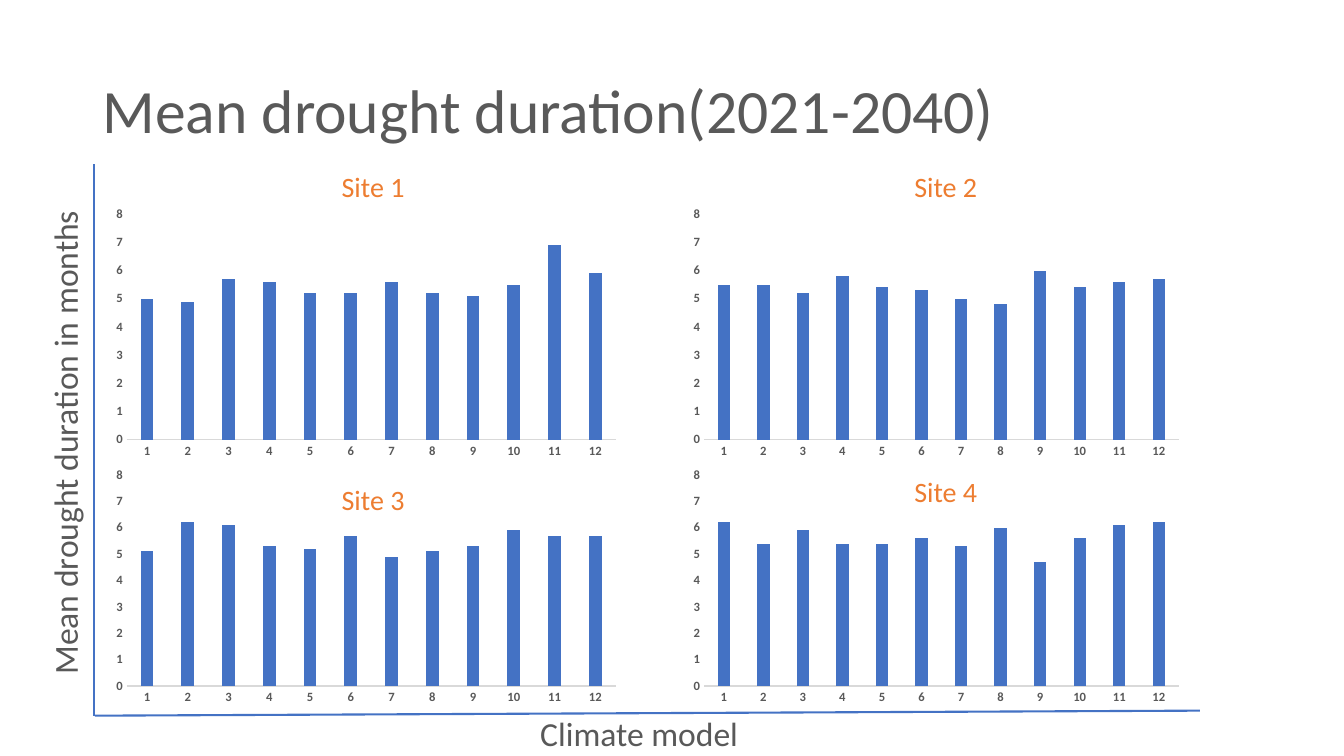
"""Build a slide comparing mean drought duration at four sites across climate models."""
from dataclasses import dataclass
from lxml.etree import SubElement
from pptx import Presentation
from pptx.chart.data import CategoryChartData
from pptx.dml.color import RGBColor
from pptx.enum.chart import XL_CHART_TYPE, XL_TICK_MARK
from pptx.enum.shapes import MSO_CONNECTOR
from pptx.enum.text import MSO_ANCHOR, MSO_AUTO_SIZE
from pptx.oxml.ns import qn
from pptx.util import Pt


@dataclass(frozen=True)
class Theme:
    font: str = "Calibri"
    grey: RGBColor = RGBColor(0x59, 0x59, 0x59)
    pale: RGBColor = RGBColor(0xD9, 0xD9, 0xD9)
    blue: RGBColor = RGBColor(0x44, 0x72, 0xC4)
    orange: RGBColor = RGBColor(0xED, 0x7D, 0x31)
    black: RGBColor = RGBColor(0, 0, 0)
    title_size: int = 44
    label_size: int = 24
    site_size: int = 20
    chart_size: int = 10
    tick_size: int = 9


theme = Theme()
PX = 9144

presentation = Presentation()
presentation.slide_width = 1333 * PX
presentation.slide_height = 750 * PX
slide = presentation.slides.add_slide(presentation.slide_layouts[6])


def add_label(text, left, top, width, height, size, color):
    shape = slide.shapes.add_textbox(left * PX, top * PX, width * PX, height * PX)
    shape.text_frame.word_wrap = True
    run = shape.text_frame.paragraphs[0].add_run()
    run.text = text
    run.font.name = theme.font
    run.font.size = Pt(size)
    run.font.color.rgb = color
    return shape


def style_font(font, size, color, bold):
    font.name = theme.font
    font.size = Pt(size)
    font.color.rgb = color
    font.bold = bold


title = add_label("Mean drought duration(2021-2040)", 92, 40, 1150, 145,
                  theme.title_size, theme.grey)
title.text_frame.vertical_anchor = MSO_ANCHOR.MIDDLE
title.text_frame.paragraphs[0].line_spacing = 0.9

columns = [(105, 516), (678, 501)]
rows = [(200, 260), (459, 245)]
durations = [
    [5, 4.9, 5.7, 5.6, 5.2, 5.2, 5.6, 5.2, 5.1, 5.5, 6.9, 5.9],
    [5.5, 5.5, 5.2, 5.8, 5.4, 5.3, 5, 4.8, 6, 5.4, 5.6, 5.7],
    [5.1, 6.2, 6.1, 5.3, 5.2, 5.7, 4.9, 5.1, 5.3, 5.9, 5.7, 5.7],
    [6.2, 5.4, 5.9, 5.4, 5.4, 5.6, 5.3, 6, 4.7, 5.6, 6.1, 6.2],
]
for index, values in enumerate(durations):
    left, width = columns[index % 2]
    top, height = rows[index // 2]
    chart_data = CategoryChartData()
    chart_data.categories = [str(model) for model in range(1, 13)]
    chart_data.add_series("Series 1", values)
    chart = slide.shapes.add_chart(XL_CHART_TYPE.COLUMN_CLUSTERED, left * PX, top * PX,
                                   width * PX, height * PX, chart_data).chart
    chart.has_legend = False
    chart.has_title = False
    style_font(chart.font, theme.chart_size, theme.black, False)

    plot = chart.plots[0]
    plot.gap_width = 219
    plot.overlap = -27
    plot.vary_by_categories = False
    bars = plot.series[0].format.fill
    bars.solid()
    bars.fore_color.rgb = theme.blue

    for axis in (chart.category_axis, chart.value_axis):
        axis.has_major_gridlines = False
        axis.major_tick_mark = XL_TICK_MARK.NONE
        axis.minor_tick_mark = XL_TICK_MARK.NONE
        style_font(axis.tick_labels.font, theme.tick_size, theme.grey, True)
    chart.category_axis.format.line.color.rgb = theme.pale
    chart.category_axis.format.line.width = Pt(0.75)
    chart.value_axis.format.line.fill.background()
    chart.value_axis.minimum_scale = 0
    chart.value_axis.maximum_scale = 8
    chart.value_axis.major_unit = 1

for start_x, start_y, end_x, end_y in [(93, 163, 93, 710), (94, 710, 1190, 705)]:
    connector = slide.shapes.add_connector(MSO_CONNECTOR.STRAIGHT, start_x * PX, start_y * PX,
                                           end_x * PX, end_y * PX)
    connector.line.color.rgb = theme.blue
    connector.line.width = Pt(1.5)
    SubElement(connector._element.spPr, qn("a:effectLst"))

duration_label = add_label("Mean drought duration in months", -179, 411, 486, 50,
                           theme.label_size, theme.grey)
duration_label.rotation = 270
model_label = add_label("Climate model", 526, 702, 354, 50, theme.label_size, theme.grey)
site_places = [(329, 163), (897, 163), (329, 474), (897, 466)]
site_labels = [
    add_label(f"Site {number}", left, top, 354, 44, theme.site_size, theme.orange)
    for number, (left, top) in enumerate(site_places, 1)
]
for label in [duration_label, model_label, *site_labels]:
    label.text_frame.auto_size = MSO_AUTO_SIZE.SHAPE_TO_FIT_TEXT

presentation.save("out.pptx")
